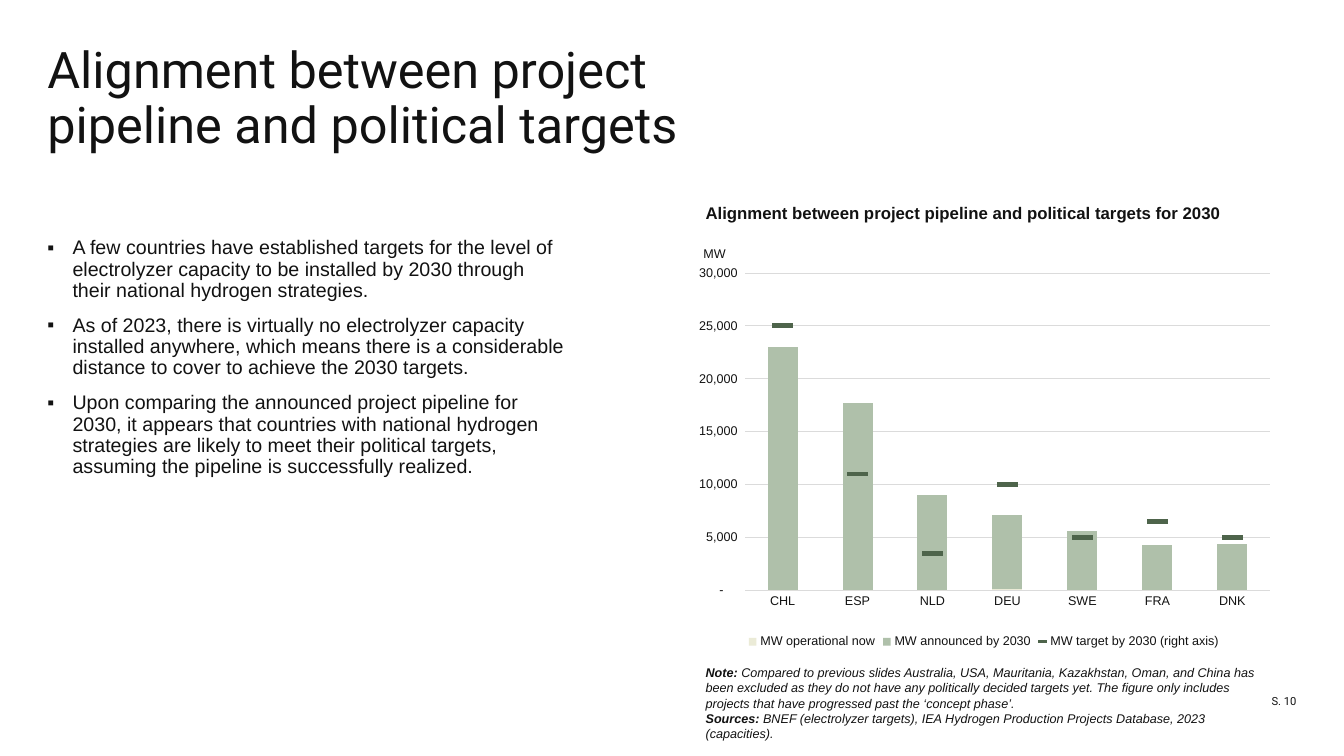
from lxml.etree import SubElement
from pptx import Presentation
from pptx.chart.data import CategoryChartData
from pptx.dml.color import RGBColor
from pptx.enum.chart import XL_CHART_TYPE, XL_LEGEND_POSITION, XL_MARKER_STYLE, XL_TICK_MARK
from pptx.enum.text import MSO_ANCHOR, MSO_AUTO_SIZE, PP_ALIGN
from pptx.oxml import parse_xml
from pptx.oxml.ns import nsdecls, qn
from pptx.util import Emu, Pt

PX = 9144
INK, GRID = "121212", "DBDBDB"
NUMBER_FORMAT = '_-* #,##0_-;\\-* #,##0_-;_-* "-"??_-;_-@_'

BULLETS = [
    "A few countries have established targets for the level of electrolyzer capacity to be "
    "installed by 2030 through their national hydrogen strategies.",
    "As of 2023, there is virtually no electrolyzer capacity installed anywhere, which means "
    "there is a considerable distance to cover to achieve the 2030 targets.",
    "Upon comparing the announced project pipeline for 2030, it appears that countries with "
    "national hydrogen strategies are likely to meet their political targets, assuming the "
    "pipeline is successfully realized.",
]
FOOTNOTES = [
    ("Note: ", "Compared to previous slides Australia, USA, Mauritania, Kazakhstan, Oman, and "
     "China has been excluded as they do not have any politically decided targets yet. The "
     "figure only includes projects that have progressed past the ‘concept phase’."),
    ("Sources:", " BNEF (electrolyzer targets), IEA Hydrogen Production Projects Database, 2023 "
     "(capacities)."),
]
COUNTRIES = ["CHL", "ESP", "NLD", "DEU", "SWE", "FRA", "DNK"]
CAPACITIES = [
    ("MW operational now", [0, 0, 0, 100, 0, 0, 0], "EBEBD7"),
    ("MW announced by 2030", [23000, 17700, 9000, 7000, 5600, 4300, 4400], "AFC0AA"),
    ("MW target by 2030 (right axis)", [25000, 11000, 3500, 10000, 5000, 6500, 5000], "4E644B"),
]


def color(value):
    return RGBColor.from_string(value)


def manual_layout(x, y, width=None, height=None):
    """Return a chart layout element placed by fractions of the chart."""
    layout = parse_xml(f"<c:layout {nsdecls('c')}><c:manualLayout/></c:layout>")
    settings = [("xMode", "edge"), ("yMode", "edge"), ("x", x), ("y", y)]
    if width:
        settings = [("layoutTarget", "inner"), *settings, ("w", width), ("h", height)]
    for name, value in settings:
        SubElement(layout[0], qn(f"c:{name}")).set("val", str(value))
    return layout


class SlideBuilder:
    """Holds the text style and the current slide."""

    def __init__(self, slide, ink=INK, body_font="Arial", title_font="Roboto"):
        self.slide, self.ink = slide, ink
        self.body_font, self.title_font = body_font, title_font

    def style(self, font, size, bold=False, italic=False, name=None):
        font.name, font.size = name or self.body_font, Pt(size)
        font.bold, font.italic = bold, italic
        font.color.rgb = color(self.ink)

    def text(self, area, paragraphs, size, bold=False, name=None, inset=True,
             anchor=MSO_ANCHOR.TOP, align=PP_ALIGN.LEFT, spacing=None):
        """Add a text box with one plain string per paragraph."""
        box = self.slide.shapes.add_textbox(*(Emu(n * PX) for n in area))
        frame = box.text_frame
        frame.word_wrap, frame.vertical_anchor = True, anchor
        if inset:
            frame.auto_size = MSO_AUTO_SIZE.SHAPE_TO_FIT_TEXT
        else:
            frame.margin_left = frame.margin_right = frame.margin_top = frame.margin_bottom = 0
        frame.text = "\n".join(paragraphs)
        for para in frame.paragraphs:
            para.alignment, para.line_spacing = align, spacing
            for span in para.runs:
                self.style(span.font, size, bold, name=name)
        return frame

    def bullets(self, area, items, size):
        """Add a list with square bullets and a hanging indent."""
        frame = self.text(area, items, size, inset=False, spacing=0.9)
        indent = 25 * PX
        for index, para in enumerate(frame.paragraphs):
            properties = para._p.get_or_add_pPr()
            properties.set("marL", str(indent))
            properties.set("indent", str(-indent))
            SubElement(properties, qn("a:buFont")).set("typeface", self.body_font)
            SubElement(properties, qn("a:buChar")).set("char", "▪")
            if index:
                para.space_before = Pt(10)

    def notes(self, area, items, size):
        """Add italic paragraphs that each open with a bold label."""
        frame = self.text(area, [label for label, _ in items], size)
        for para, (_, wording) in zip(frame.paragraphs, items):
            para.add_run().text = wording
            for index, span in enumerate(para.runs):
                self.style(span.font, size, bold=index == 0, italic=True)

    def chart(self, area, categories, rows, unit, size):
        """Add stacked columns with the last row drawn as dash markers."""
        data = CategoryChartData()
        data.categories = categories
        for name, values, _ in rows:
            data.add_series(name, values)
        chart = self.slide.shapes.add_chart(
            XL_CHART_TYPE.COLUMN_STACKED, *(Emu(n * PX) for n in area), data).chart
        self.style(chart.font, size)
        chart.has_title = False
        chart.has_legend = True
        chart.legend.position = XL_LEGEND_POSITION.BOTTOM
        chart.legend.include_in_layout = False
        self.style(chart.legend.font, size)
        self.axes(chart, unit, size)
        columns = chart.plots[0]
        columns.gap_width, columns.overlap, columns.vary_by_categories = 150, 100, False
        self.markers(chart, rows[-1][2])
        for series, (_, _, fill) in zip(columns.series, rows):
            series.invert_if_negative = False
            series.format.fill.solid()
            series.format.fill.fore_color.rgb = color(fill)
        plot_area = columns._element.getparent()
        for layout in plot_area.findall(qn("c:layout")):
            plot_area.remove(layout)
        plot_area.insert(0, manual_layout(0.083, 0.085, 0.917, 0.764))

    def axes(self, chart, unit, size):
        """Format both axes, the gridlines and the unit label."""
        category, value = chart.category_axis, chart.value_axis
        for axis in (category, value):
            axis.major_tick_mark = axis.minor_tick_mark = XL_TICK_MARK.NONE
            self.style(axis.tick_labels.font, size)
        value.minimum_scale, value.maximum_scale, value.major_unit = 0, 30000, 5000
        value.tick_labels.number_format = NUMBER_FORMAT
        value.tick_labels.number_format_is_linked = False
        value.format.line.fill.background()
        value.has_major_gridlines = True
        for line in (category.format.line, value.major_gridlines.format.line):
            line.color.rgb, line.width = color(GRID), Pt(0.75)
        title = value.axis_title
        title.text_frame.text = unit
        self.style(title.text_frame.paragraphs[0].runs[0].font, size)
        title.text_frame._txBody.bodyPr.set("rot", "0")
        title.text_frame._txBody.bodyPr.set("vert", "horz")
        for layout in title._element.findall(qn("c:layout")):
            title._element.remove(layout)
        title._element.find(qn("c:tx")).addnext(manual_layout(0.006, 0.012))

    def markers(self, chart, fill):
        """Move the last column series to a line plot showing markers only."""
        bars = chart.plots[0]._element
        target = bars.findall(qn("c:ser"))[-1]
        for setting in target.findall(qn("c:invertIfNegative")):
            target.remove(setting)
        lines = parse_xml(
            f'<c:lineChart {nsdecls("c")}><c:grouping val="standard"/>'
            '<c:varyColors val="0"/><c:marker val="1"/></c:lineChart>')
        lines.insert(2, target)
        for axis in bars.findall(qn("c:axId")):
            SubElement(lines, qn("c:axId")).set("val", axis.get("val"))
        bars.addnext(lines)
        series = chart.plots[1].series[0]
        series.smooth = False
        series.format.line.fill.background()
        marker = series.marker
        marker.style, marker.size = XL_MARKER_STYLE.DASH, 14
        marker.format.fill.solid()
        marker.format.fill.fore_color.rgb = color(fill)
        marker.format.line.fill.background()


def main():
    deck = Presentation()
    deck.slide_width, deck.slide_height = Emu(1333 * PX), Emu(750 * PX)
    page = SlideBuilder(deck.slides.add_slide(deck.slide_layouts[6]))
    page.bullets((47, 236, 514, 332), BULLETS, 14)
    page.text((47, 47, 757, 106), ["Alignment between project pipeline and political targets"], 36,
              name=page.title_font, inset=False, anchor=MSO_ANCHOR.BOTTOM, spacing=0.9)
    page.text((1183, 663, 103, 39), ["S. 10"], 8, name=page.title_font, inset=False,
              anchor=MSO_ANCHOR.BOTTOM, align=PP_ALIGN.RIGHT)
    page.notes((690, 655, 582, 86), FOOTNOTES, 9)
    page.chart((690, 236, 570, 412), COUNTRIES, CAPACITIES, "MW", 9)
    page.text((690, 196, 666, 30),
              ["Alignment between project pipeline and political targets for 2030"], 12, bold=True)
    deck.save("out.pptx")


if __name__ == "__main__":
    main()
